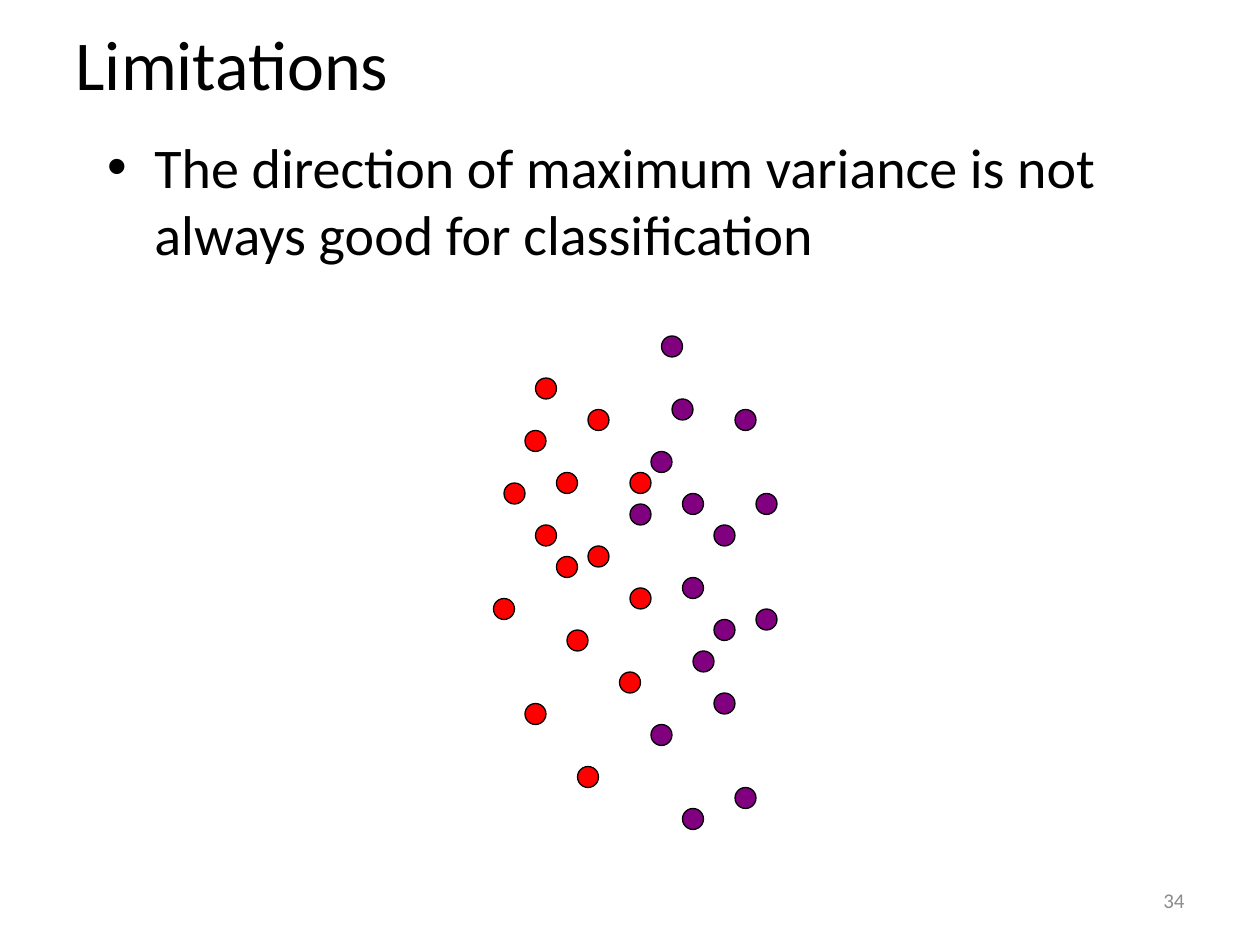
import pptx
import pptx.dml.color
import pptx.enum.shapes
import pptx.enum.text
import pptx.util

PX = 9525  # EMU per px, 96 px to the inch
FONT = "Calibri"
BLACK, RED, PURPLE, GREY = "000000", "FF0000", "800080", "8C8C8C"

# Dot positions as (column, row) steps of the scatter grid
GRID_STEP = 8
DOT_SIZE = 2 * GRID_STEP
RED_CLASS = [
    (4, 4), (6, 13), (3, 9), (1, 14), (4, 18), (7, 28), (9, 20), (0, 25),
    (6, 21), (3, 35), (9, 7), (13, 13), (13, 24), (12, 32), (8, 41),
]
PURPLE_CLASS = [
    (16, 0), (18, 15), (15, 11), (13, 16), (21, 18), (19, 30), (23, 7), (21, 27),
    (18, 23), (15, 37), (17, 6), (25, 15), (25, 26), (21, 34), (23, 43), (18, 45),
]


def px(length):
    return pptx.util.Emu(length * PX)


def color(hex_string):
    return pptx.dml.color.RGBColor.from_string(hex_string)


def place(shape, box):
    shape.left, shape.top, shape.width, shape.height = map(px, box)


def write(shape, text, size, hex_string, alignment, anchor):
    frame = shape.text_frame
    frame.word_wrap = True
    frame.auto_size = pptx.enum.text.MSO_AUTO_SIZE.NONE
    frame.vertical_anchor = anchor
    paragraph = frame.paragraphs[0]
    paragraph.alignment = alignment
    run = paragraph.add_run()
    run.text = text
    run.font.name = FONT
    run.font.size = pptx.util.Pt(size)
    run.font.color.rgb = color(hex_string)


def add_title(slide, box):
    title = slide.shapes.title
    place(title, box)
    write(title, "Limitations", 40, BLACK,
          pptx.enum.text.PP_ALIGN.LEFT, pptx.enum.text.MSO_ANCHOR.MIDDLE)


def add_body(slide, box):
    # Bullet and hanging indent come from the template
    body = slide.placeholders[1]
    place(body, box)
    write(body, "The direction of maximum variance is not always good for classification",
          32, BLACK, pptx.enum.text.PP_ALIGN.LEFT, pptx.enum.text.MSO_ANCHOR.TOP)


def add_dot(slide, left, top, hex_string):
    dot = slide.shapes.add_shape(
        pptx.enum.shapes.MSO_SHAPE.OVAL, px(left), px(top), px(DOT_SIZE), px(DOT_SIZE))
    dot.shadow.inherit = False
    dot.fill.solid()
    dot.fill.fore_color.rgb = color(hex_string)
    dot.line.color.rgb = color(BLACK)
    dot.line.width = pptx.util.Pt(0.75)


def add_scatter(slide, left, top):
    for hex_string, points in ((RED, RED_CLASS), (PURPLE, PURPLE_CLASS)):
        for column, row in points:
            add_dot(slide, left + column * GRID_STEP, top + row * GRID_STEP, hex_string)


def add_page_number(slide, box):
    number = slide.shapes.add_textbox(*map(px, box))
    write(number, "34", 12, GREY,
          pptx.enum.text.PP_ALIGN.RIGHT, pptx.enum.text.MSO_ANCHOR.MIDDLE)


def main():
    presentation = pptx.Presentation()
    presentation.slide_width, presentation.slide_height = px(960), px(720)
    slide = presentation.slides.add_slide(presentation.slide_layouts[1])

    add_title(slide, (48, 0, 864, 96))
    add_body(slide, (72, 96, 816, 112))
    add_scatter(slide, 376, 256)
    add_page_number(slide, (688, 667, 224, 38))

    presentation.save("out.pptx")


if __name__ == "__main__":
    main()
